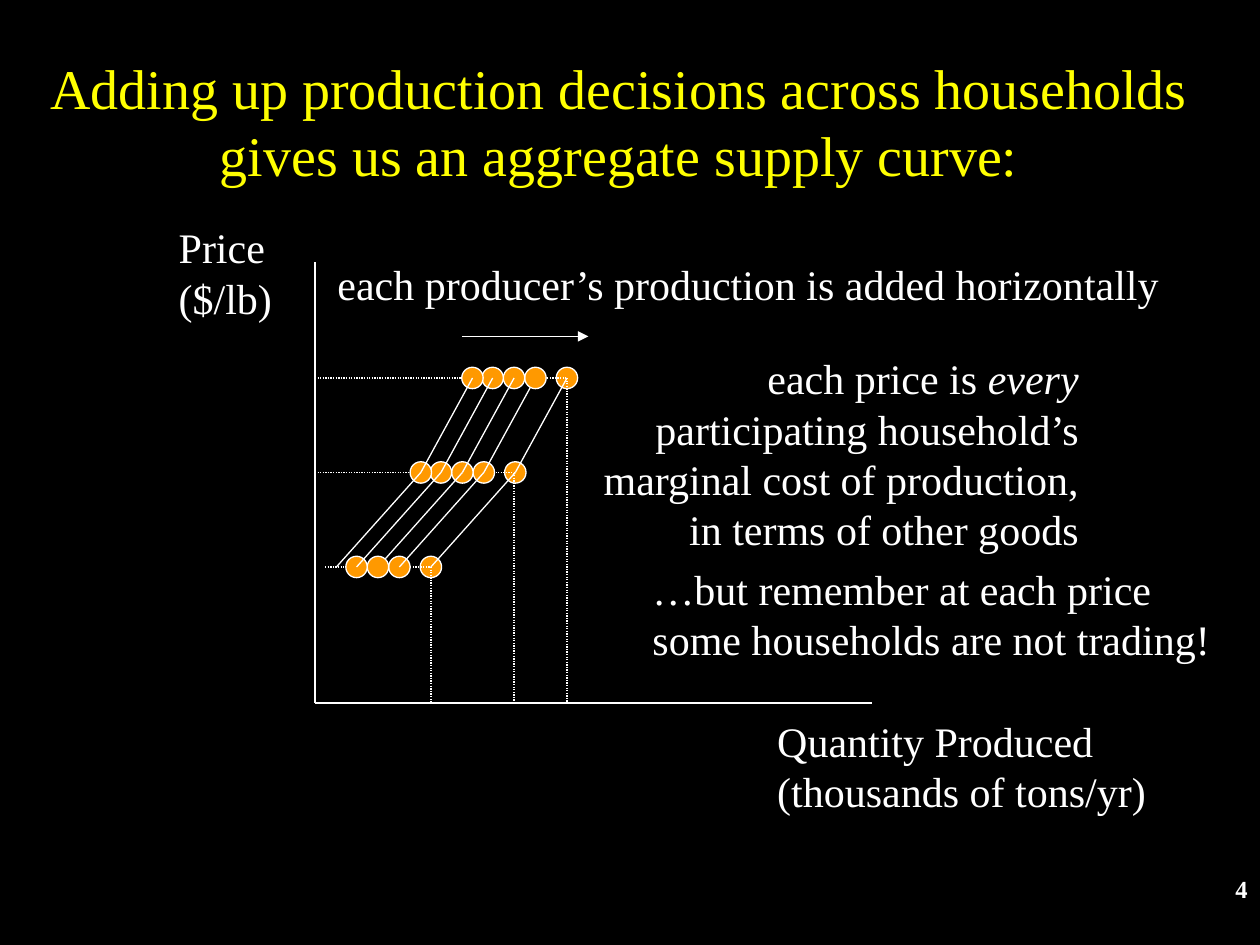
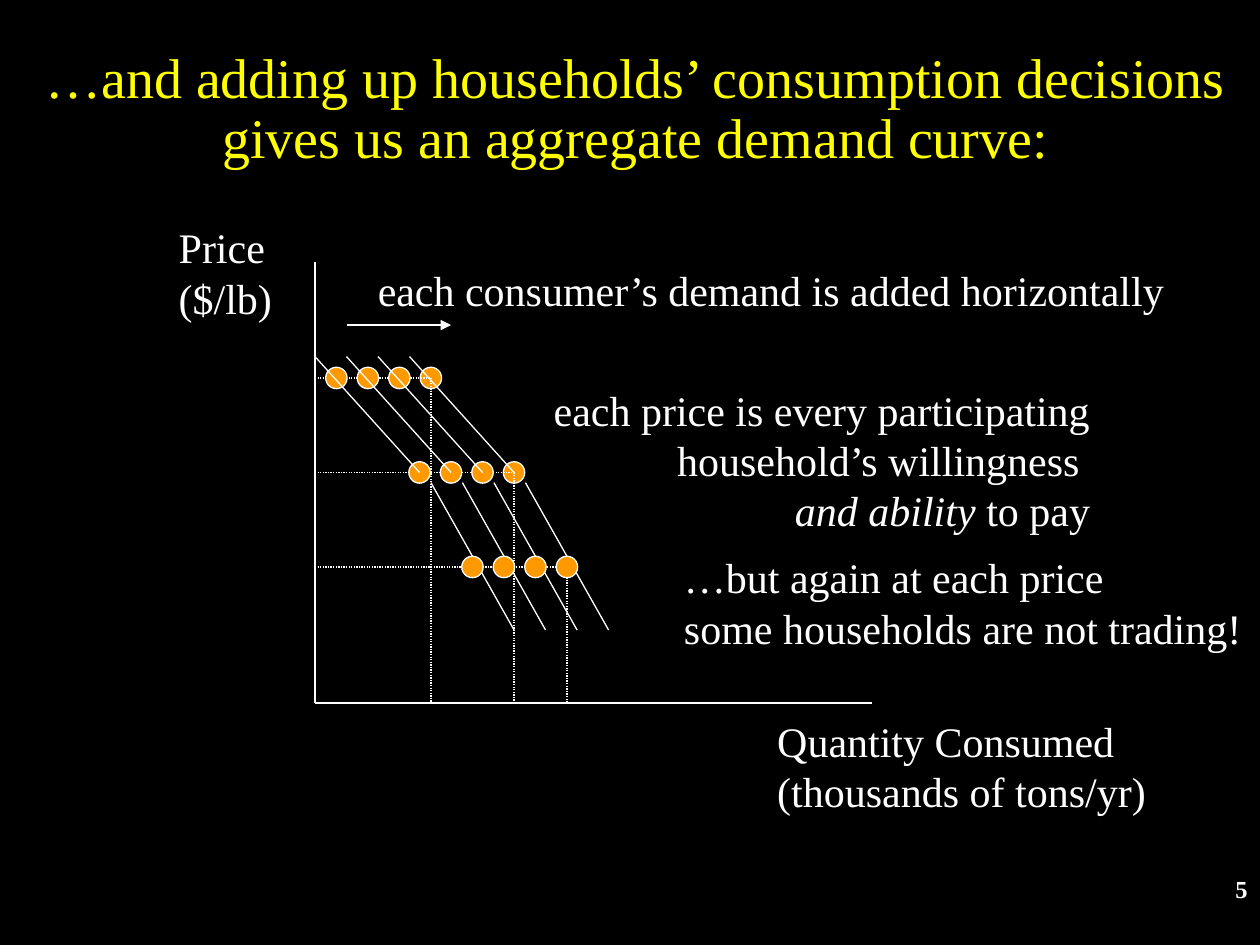
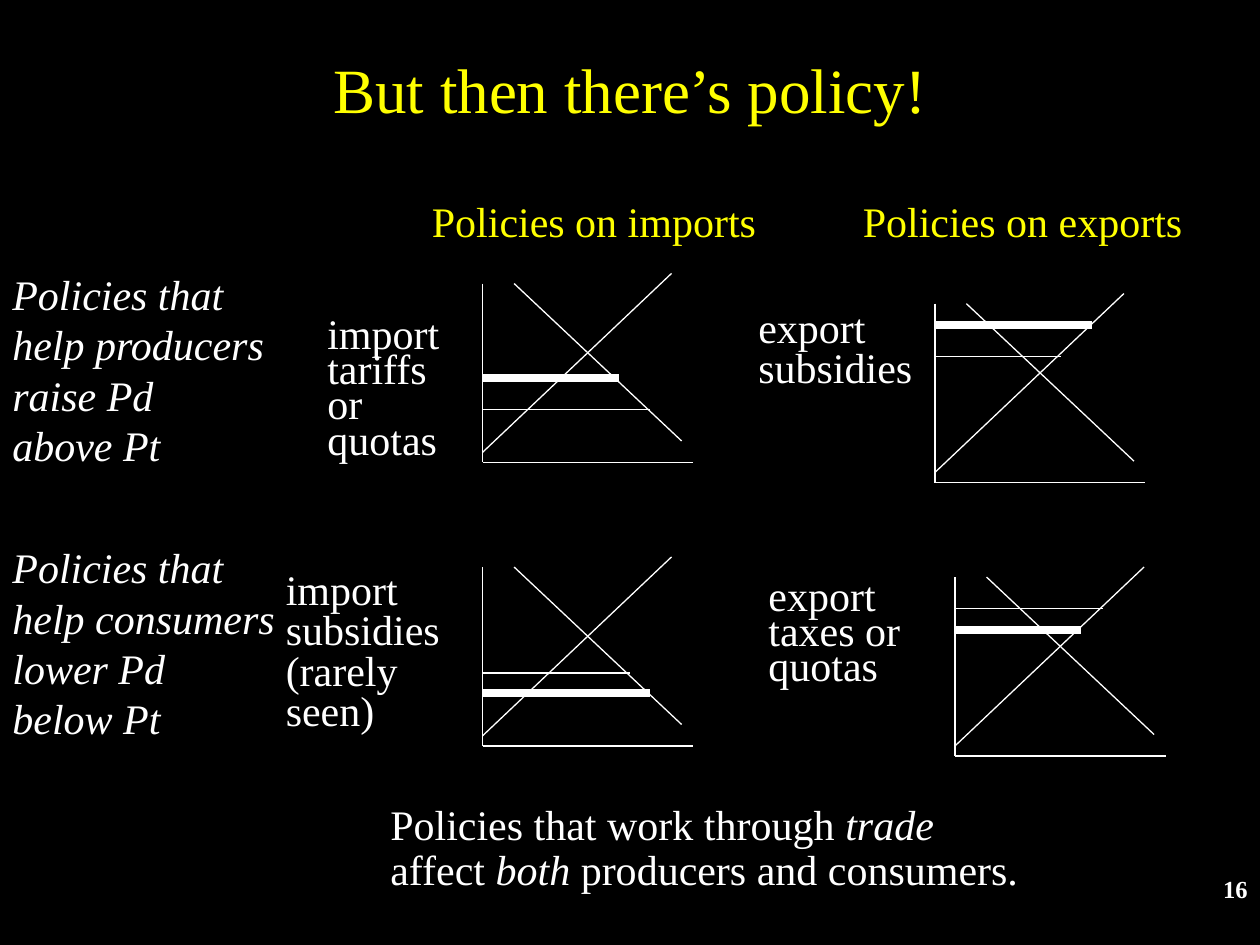
import pptx
import pptx.util
import pptx.dml.color
import pptx.enum.dml
import pptx.enum.shapes
import pptx.enum.text
import pptx.oxml
import pptx.oxml.ns
from pptx.util import Inches

# Shared look
FONT = "Times New Roman"
BLACK, WHITE, GOLD, AMBER = "000000", "FFFFFF", "FFFF00", "FF9900"
ALIGN = pptx.enum.text.PP_ALIGN
FIT = pptx.enum.text.MSO_AUTO_SIZE

# Shared graph: origin, axis ends and the three price levels
LEFT, BASE = 2.5, 5.58
HIGH, MID, LOW = 3, 3.75, 4.5
DOT = 0.17


def color(code):
    return pptx.dml.color.RGBColor.from_string(code)


# Text: "\n" parts paragraphs, "*" turns italics on and off
def write(frame, text, size=24, hue=WHITE, bold=False, align=None, gap=None):
    for i, row in enumerate(text.split("\n")):
        para = frame.paragraphs[0] if i == 0 else frame.add_paragraph()
        para.alignment = align
        para.line_spacing = gap
        for j, part in enumerate(row.split("*")):
            if not part:
                continue
            run = para.add_run()
            run.text = part
            font = run.font
            font.name, font.size = FONT, pptx.util.Pt(size)
            font.bold, font.italic = bold, j % 2 == 1
            font.color.rgb = color(hue)


def label(slide, text, x, y, w, h, wrap=True, fit=FIT.SHAPE_TO_FIT_TEXT, **style):
    box = slide.shapes.add_textbox(Inches(x), Inches(y), Inches(w), Inches(h))
    frame = box.text_frame
    frame.word_wrap = wrap
    frame.auto_size = fit
    write(frame, text, **style)


def line(slide, start, end, width=0.75, dotted=False, arrow=False):
    link = slide.shapes.add_connector(
        pptx.enum.shapes.MSO_CONNECTOR.STRAIGHT,
        *[Inches(n) for n in (*start, *end)])
    link.line.color.rgb = color(WHITE)
    link.line.width = pptx.util.Pt(width)
    if dotted:
        link.line.dash_style = pptx.enum.dml.MSO_LINE.ROUND_DOT
    if arrow:
        tail = pptx.oxml.parse_xml(
            '<a:tailEnd %s type="triangle"/>' % pptx.oxml.ns.nsdecls("a"))
        link.line._get_or_add_ln().append(tail)
    link._element.spPr.append(pptx.oxml.parse_xml(
        "<a:effectLst %s/>" % pptx.oxml.ns.nsdecls("a")))


def dot(slide, x, y):
    ball = slide.shapes.add_shape(
        pptx.enum.shapes.MSO_SHAPE.OVAL, Inches(x - DOT / 2),
        Inches(y - DOT / 2), Inches(DOT), Inches(DOT))
    ball.shadow.inherit = False
    ball.fill.solid()
    ball.fill.fore_color.rgb = color(AMBER)
    ball.line.color.rgb = color(WHITE)
    ball.line.width = pptx.util.Pt(0.75)


# New slide with title and page number
def page(deck, number, text, x, y, w, size=32, gap=None):
    slide = deck.slides.add_slide(deck.slide_layouts[5])
    title = slide.shapes.title
    title.left, title.top = Inches(x), Inches(y)
    title.width, title.height = Inches(w), Inches(1.25)
    frame = title.text_frame
    frame.word_wrap = True
    frame.auto_size = FIT.NONE
    frame.vertical_anchor = pptx.enum.text.MSO_ANCHOR.MIDDLE
    write(frame, text, size=size, hue=GOLD, align=ALIGN.CENTER, gap=gap)
    label(slide, str(number), 8.75, 6.89, 1.25, 0.33, fit=FIT.NONE,
          size=14, bold=True, align=ALIGN.RIGHT)
    return slide


# Axes with their names
def axes(slide, noun):
    line(slide, (LEFT, BASE), (6.92, BASE))
    line(slide, (LEFT, BASE), (LEFT, 2.08))
    label(slide, "Price\n($/lb)", 1.32, 1.71, 0.94, 0.9, wrap=False)
    label(slide, f"Quantity {noun}\n(thousands of tons/yr)",
          6.07, 5.63, 3.13, 0.9, wrap=False)


# Dotted guides: each price across to the total, then down to the axis
def guides(slide, totals):
    for start, x, y in totals:
        line(slide, (start, y), (x, y), dotted=True)
        line(slide, (x, y), (x, BASE), dotted=True)


def supply(slide):
    starts = (3.42, 3.17, 3, 2.83, 2.67)
    for i, x in enumerate(starts):
        low, mid, high = (x, LOW), (x + 0.67, MID), (x + 1.08, HIGH)
        over = {1: [high], 2: [low]}.get(i, [])
        spots = [mid, high] if x == starts[-1] else [low, mid, high]
        for spot in spots:
            if spot not in over:
                dot(slide, *spot)
        if i == 0:
            guides(slide, [(LEFT, 4.5, HIGH), (LEFT, 4.08, MID),
                           (2.58, 3.42, LOW)])
        line(slide, low, mid)
        line(slide, mid, high)
        for spot in over:
            dot(slide, *spot)


def demand(slide):
    shifts = (0.75, 0.5, 0.25, 0)
    for i, x in enumerate(shifts):
        dot(slide, 2.67 + x, HIGH)
        dot(slide, 3.33 + x, MID)
        if i == 0:
            guides(slide, [(LEFT, 3.42, HIGH), (LEFT, 4.08, MID),
                           (LEFT, 4.5, LOW)])
        line(slide, (2.5 + x, 2.83), (3.33 + x, MID))
        line(slide, (3.42 + x, 3.83), (4.08 + x, 5))
    for x in shifts:
        dot(slide, 3.75 + x, LOW)


# Small market graph; trade and home are (height, length) of price lines
def market(slide, x, y, trade, home):
    line(slide, (x, y - 1.42), (x, y))
    line(slide, (x, y), (x + 1.67, y))
    line(slide, (x, y - 0.08), (x + 1.5, y - 1.5))
    line(slide, (x + 0.25, y - 1.42), (x + 1.58, y - 0.17))
    for (rise, span), width in ((trade, 1), (home, 4.5)):
        line(slide, (x, y - rise), (x + span, y - rise), width=width)


def sell(deck):
    slide = page(deck, 4, "Adding up production decisions across households "
                 "gives us an aggregate supply curve:", 0.08, 0.33, 9.67)
    axes(slide, "Produced")
    supply(slide)
    line(slide, (3.67, 2.67), (4.67, 2.67), arrow=True)
    label(slide, "each producer’s production is added horizontally",
          2.58, 2, 6.72, 0.5, wrap=False)
    label(slide, "each price is *every* participating household’s marginal "
          "cost of production, in terms of other goods",
          4.58, 2.75, 4.08, 1.7, align=ALIGN.RIGHT)
    label(slide, "…but remember at each price some households are not trading!",
          5.08, 4.42, 4.83, 0.9)


def buy(deck):
    slide = page(deck, 5, "…and adding up households’ consumption decisions "
                 "gives us an aggregate demand curve:",
                 0.17, 0.25, 9.75, gap=0.9)
    axes(slide, "Consumed")
    demand(slide)
    line(slide, (2.75, 2.58), (3.58, 2.58), arrow=True)
    label(slide, "each consumer’s demand is added horizontally",
          2.9, 2.05, 6.44, 0.5, wrap=False)
    label(slide, "each price is every participating household’s willingness \n"
          "*and ability *to pay", 3.75, 3, 5, 1.3, align=ALIGN.RIGHT)
    label(slide, "…but again at each price\nsome households are not trading!",
          5.33, 4.33, 4.75, 0.9)


def policy(deck):
    slide = page(deck, 16, "But then there’s policy!", 0.75, 0.08, 8.5, size=36)
    # Column and row heads
    for x, trade in ((3.33, "imports"), (6.75, "exports")):
        label(slide, f"Policies on {trade}", x, 1.5, 2.9, 0.5, hue=GOLD)
    label(slide, "*Policies that*\n*help producers*\n*raise Pd*\n*above Pt*",
          0, 2.08, 2.5, 1.7)
    label(slide, "*Policies that*\n*help consumers*\n*lower Pd*\n*below Pt*",
          0, 4.25, 2.42, 1.7)
    # Four policies, each with its graph
    label(slide, "import\ntariffs\nor\nquotas", 2.5, 2.5, 1.17, 1.22,
          wrap=False, gap=0.7)
    label(slide, "export\nsubsidies", 5.92, 2.42, 1.67, 0.74, gap=0.8)
    label(slide, "import\nsubsidies\n(rarely seen)", 2.17, 4.5, 1.67, 1.38, gap=0.8)
    label(slide, "export taxes or quotas", 6, 4.58, 1.75, 0.94, gap=0.7)
    market(slide, 3.83, 3.67, (0.42, 1.33), (0.67, 1.08))
    market(slide, 7.42, 3.83, (1, 1), (1.25, 1.25))
    market(slide, 3.83, 5.92, (0.58, 1.17), (0.42, 1.33))
    market(slide, 7.58, 6, (1.17, 1.17), (1, 1))
    label(slide, "Policies that work through *trade*\n"
          "affect *both* producers and consumers.", 3, 6.33, 5.33, 0.82, gap=0.9)


def main():
    deck = pptx.Presentation()
    deck.slide_width, deck.slide_height = Inches(10), Inches(7.5)
    back = deck.slide_master.background.fill
    back.solid()
    back.fore_color.rgb = color(BLACK)
    sell(deck)
    buy(deck)
    policy(deck)
    deck.save("out.pptx")


if __name__ == "__main__":
    main()
